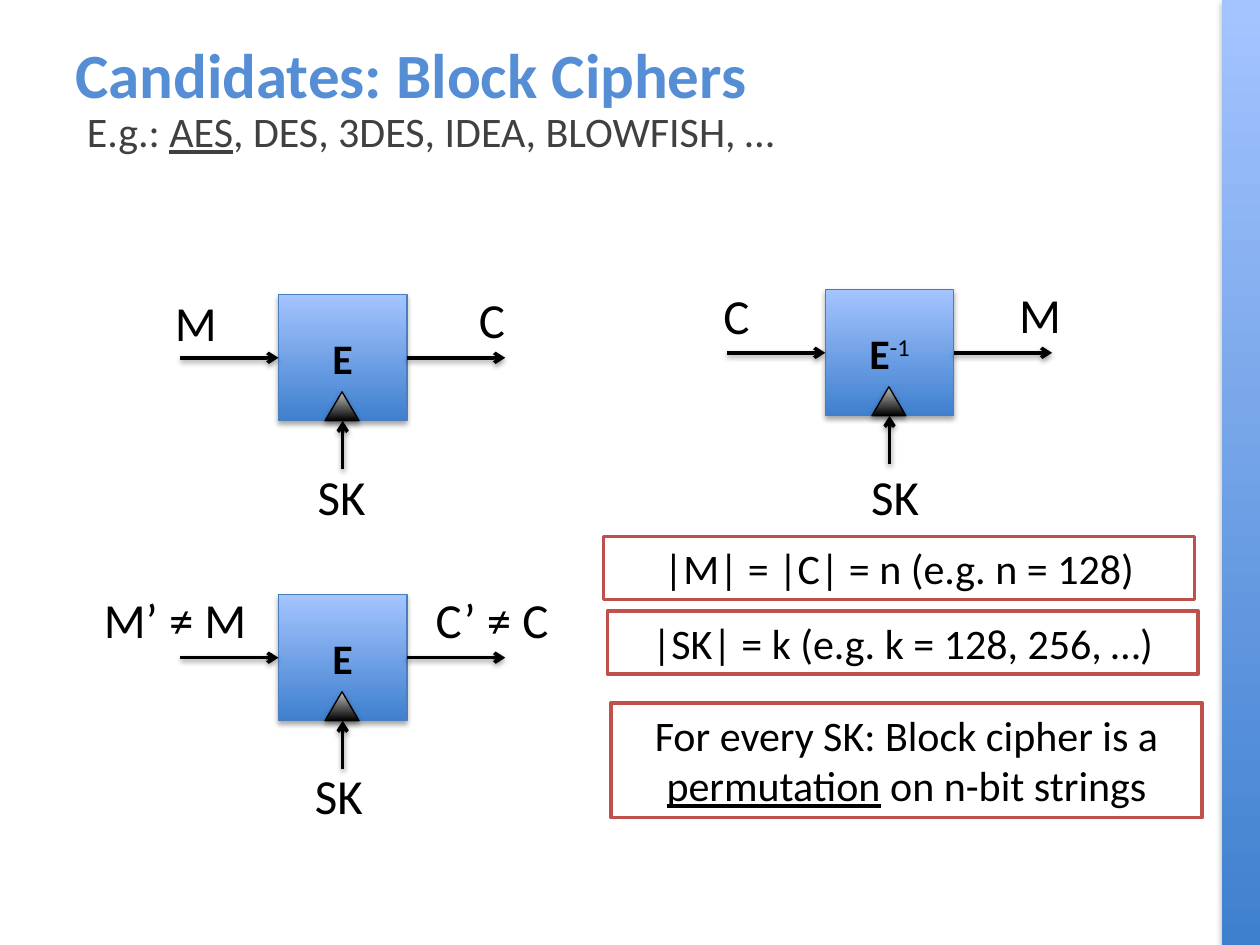
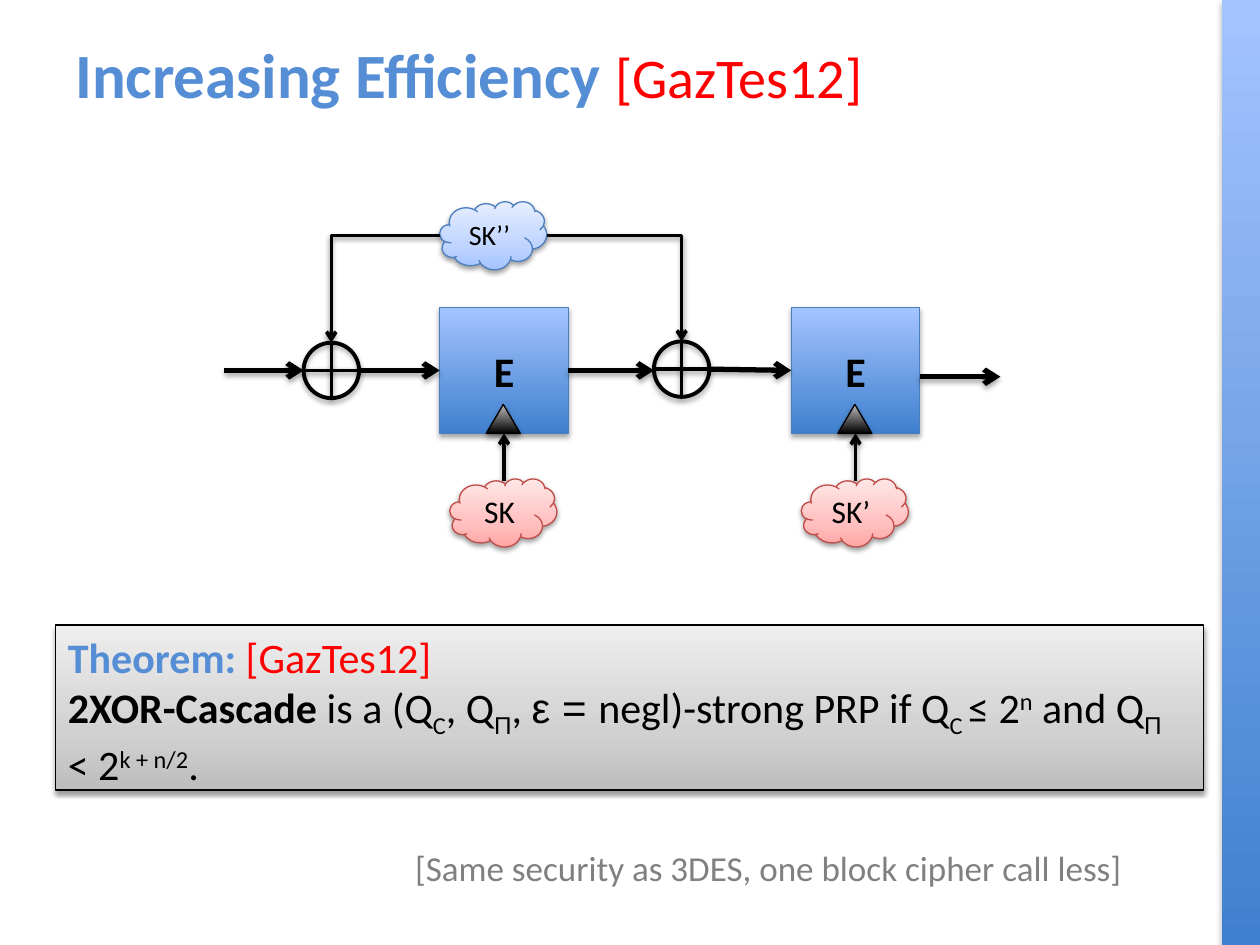
from lxml.etree import SubElement
from pptx import Presentation
from pptx.dml.color import RGBColor
from pptx.enum.shapes import MSO_CONNECTOR as CONNECTOR, MSO_SHAPE as SHAPE
from pptx.enum.text import MSO_ANCHOR as ANCHOR, PP_ALIGN as ALIGN
from pptx.oxml.ns import qn
from pptx.util import Inches, Pt

COLORS = {
    "black": "000000", "white": "FFFFFF", "title": "558ED5", "cite": "FF0000",
    "body": "404040", "note": "808080", "frame": "C0504D",
    "blue_line": "4B7EBC", "red_line": "BF4C48",
}
# Gradient stops run from bottom (0 %) to top (100 %)
GRADIENTS = {
    "blue": [(0, "3F80CE"), (100, "A4C4FF")],
    "dark": [(0, "000000"), (100, "BDBDBD")],
    "red_cloud": [(0, "FFA6A5"), (35, "FFC0BF"), (100, "FFE7E7")],
    "blue_cloud": [(0, "A4C4FF"), (35, "BFD4FF"), (100, "E6EEFF")],
    "gray": [(0, "BDBDBD"), (35, "D1D1D1"), (100, "EEEEEE")],
}
# Shadow: opacity in percent, distance in points
STRONG, SOFT = (35, 1.8), (38, 1.6)
SUBSCRIPT, SUPERSCRIPT = -25, 30


def add_item(slide, kind, box, paragraphs=(), fill=None, line=None, weight=0.75,
             shadow=None, size=24, color="black", align=ALIGN.CENTER, anchor=ANCHOR.TOP):
    """Add a shape (or a text box if kind is None); a paragraph is a list of (text, options)."""
    lengths = [Inches(value) for value in box]
    if kind is None:
        shape = slide.shapes.add_textbox(*lengths)
    else:
        shape = slide.shapes.add_shape(kind, *lengths)
        shape.shadow.inherit = False
        if fill in GRADIENTS:
            shape.fill.gradient()
            shape.fill.gradient_angle = 90
            stops = shape._element.spPr.find(qn("a:gradFill")).find(qn("a:gsLst"))
            stops[:] = []
            for position, stop_color in GRADIENTS[fill]:
                stop = SubElement(stops, qn("a:gs"), pos=str(position * 1000))
                SubElement(stop, qn("a:srgbClr"), val=stop_color)
        elif fill:
            shape.fill.solid()
            shape.fill.fore_color.rgb = RGBColor.from_string(COLORS[fill])
        else:
            shape.fill.background()
        if line:
            shape.line.color.rgb = RGBColor.from_string(COLORS[line])
            shape.line.width = Pt(weight)
        else:
            shape.line.fill.background()
        if shadow:
            effects = shape._element.spPr.find(qn("a:effectLst"))
            cast = SubElement(effects, qn("a:outerShdw"), blurRad=str(Pt(3.1)),
                              dist=str(Pt(shadow[1])), dir="5400000", rotWithShape="0")
            tone = SubElement(cast, qn("a:srgbClr"), val=COLORS["black"])
            SubElement(tone, qn("a:alpha"), val=str(shadow[0] * 1000))
    frame = shape.text_frame
    frame.word_wrap = True
    frame.vertical_anchor = anchor
    for index, runs in enumerate(paragraphs):
        paragraph = frame.add_paragraph() if index else frame.paragraphs[0]
        paragraph.alignment = align
        paragraph.font.size = Pt(size)
        paragraph.font.name = "Calibri"
        paragraph.font.color.rgb = RGBColor.from_string(COLORS[color])
        for text, options in runs:
            run = paragraph.add_run()
            run.text = text
            run.font.bold = options.get("bold")
            run.font.underline = options.get("underline")
            if "size" in options:
                run.font.size = Pt(options["size"])
            if "font" in options:
                run.font.name = options["font"]
            if "color" in options:
                run.font.color.rgb = RGBColor.from_string(COLORS[options["color"]])
            if "base" in options:
                run._r.get_or_add_rPr().set("baseline", str(options["base"] * 1000))
    return shape


def add_line(slide, start, end, weight=2, arrow=True, shadow=SOFT, bent=False,
             begin=None, finish=None):
    """Add a line; begin and finish are optional (shape, side) joints."""
    kind = CONNECTOR.ELBOW if bent else CONNECTOR.STRAIGHT
    connector = slide.shapes.add_connector(kind, *[Inches(value) for value in start + end])
    properties = connector._element.spPr
    if bent:
        properties.find(qn("a:prstGeom")).set("prst", "bentConnector2")
    if begin:
        connector.begin_connect(*begin)
    if finish:
        connector.end_connect(*finish)
    connector.line.color.rgb = RGBColor.from_string(COLORS["black"])
    connector.line.width = Pt(weight)
    if arrow:
        SubElement(properties.find(qn("a:ln")), qn("a:tailEnd"), type="arrow")
    effects = SubElement(properties, qn("a:effectLst"))
    cast = SubElement(effects, qn("a:outerShdw"), blurRad=str(Pt(3.1)),
                      dist=str(Pt(shadow[1])), dir="5400000", rotWithShape="0")
    tone = SubElement(cast, qn("a:srgbClr"), val=COLORS["black"])
    SubElement(tone, qn("a:alpha"), val=str(shadow[0] * 1000))


presentation = Presentation()
presentation.slide_width, presentation.slide_height = Inches(10), Inches(7.5)
blank = presentation.slide_layouts[6]

# Shared: side band and title
citation = ("[GazTes12]", {"color": "cite", "bold": False})
titles = [
    [("Candidates: Block Ciphers", {"bold": True})],
    [("Increasing Efficiency ", {"bold": True}), (citation[0], {**citation[1], "size": 32})],
]
slides = []
for title in titles:
    slide = presentation.slides.add_slide(blank)
    add_item(slide, SHAPE.RECTANGLE, (9.7, 0, 0.3, 7.5), fill="blue", shadow=STRONG)
    add_item(slide, None, (0.5, 0.17, 9.04, 0.83), [title], size=36, color="title",
             align=ALIGN.LEFT, anchor=ANCHOR.MIDDLE)
    slides.append(slide)
candidates, cascade = slides

# Shared: cipher boxes with key triangle and key arrow
BOX_WIDTH, BOX_HEIGHT = 1.02, 1
encrypt = [("E", {"bold": True})]
decrypt = encrypt + [("-1", {"base": SUPERSCRIPT})]
ciphers = [
    (candidates, 2.21, 2.34, encrypt),
    (candidates, 6.55, 2.3, decrypt),
    (candidates, 2.21, 4.72, encrypt),
    (cascade, 3.49, 2.44, encrypt),
    (cascade, 6.28, 2.44, encrypt),
]
cipher_boxes = []
for slide, left, top, name in ciphers:
    middle, bottom = left + BOX_WIDTH / 2, top + BOX_HEIGHT
    cipher_box = add_item(slide, SHAPE.RECTANGLE, (left, top, BOX_WIDTH, BOX_HEIGHT), [name],
                          fill="blue", line="blue_line", shadow=STRONG, anchor=ANCHOR.MIDDLE)
    add_line(slide, (middle, bottom + 0.38), (middle, bottom), finish=(cipher_box, 2))
    add_item(slide, SHAPE.ISOSCELES_TRIANGLE, (middle - 0.14, bottom - 0.23, 0.27, 0.23),
             fill="dark", line="black", shadow=STRONG)
    cipher_boxes.append(cipher_box)

# Slide 1: input and output arrows
for (slide, left, top, name), cipher_box in zip(ciphers[:3], cipher_boxes):
    center, right = top + BOX_HEIGHT / 2, left + BOX_WIDTH
    add_line(slide, (left - 0.78, center), (left, center), finish=(cipher_box, 1))
    add_line(slide, (right, center), (right + 0.78, center), begin=(cipher_box, 3))

# Slide 1: labels of messages, ciphertexts and keys
labels = [
    ("M", 1.29, 2.27, 0.42), ("C", 3.06, 2.25, 1.69), ("SK", 2.4, 3.65, 0.62),
    ("C", 5.49, 2.22, 0.71), ("M", 7.41, 2.21, 1.69), ("SK", 6.74, 3.65, 0.73),
    ("M’ ≠ M", 0.72, 4.63, 1.34), ("C’ ≠ C", 3.06, 4.63, 1.69), ("SK", 2.32, 6.03, 0.74),
]
for text, left, top, width in labels:
    add_item(candidates, None, (left, top, width, 0.57), [[(text, {})]], size=28)

# Slide 1: examples and framed facts
examples = [("E.g.: ", {}), ("AES", {"underline": True}),
            (", DES, 3DES, IDEA, BLOWFISH, …", {})]
add_item(candidates, None, (0.59, 0.79, 8.95, 0.5), [examples], color="body", align=ALIGN.LEFT)
facts = [
    (4.79, 4.26, 0.5, [("|M| = |C| = n (e.g. n = 128)", {})]),
    (4.82, 4.85, 0.5, [("|SK| = k (e.g. k = 128, 256, …)", {})]),
    (4.85, 5.58, 0.91, [("For every SK: Block cipher is a ", {}),
                        ("permutation", {"underline": True}), (" on n-bit strings", {})]),
]
for left, top, height, runs in facts:
    add_item(candidates, SHAPE.RECTANGLE, (left, top, 4.69, height), [runs],
             fill="white", line="frame", weight=2)

# Slide 2: XOR gates
GATE = 0.44
for left, top in [(2.41, 2.72), (5.19, 2.71)]:
    middle, center = left + GATE / 2, top + GATE / 2
    add_item(cascade, SHAPE.OVAL, (left, top, GATE, GATE), line="black", weight=2.25,
             shadow=STRONG)
    add_line(cascade, (middle, top), (middle, top + GATE), arrow=False)
    add_line(cascade, (left, center), (left + GATE, center), arrow=False)

# Slide 2: data path
first_box, second_box = cipher_boxes[3:]
data_path = [
    (1.78, 2.41, 2.94, None, None),
    (2.85, 3.49, 2.94, None, (first_box, 1)),
    (4.51, 5.19, 2.94, (first_box, 3), None),
    (5.64, 6.28, 2.93, None, (second_box, 1)),
    (7.3, 7.94, 2.99, None, None),
]
for start, end, height, begin, finish in data_path:
    add_line(cascade, (start, height), (end, height), weight=3, shadow=STRONG,
             begin=begin, finish=finish)

# Slide 2: key clouds and whitening key lines
clouds = [
    ("SK", 3.57, 3.8, 18, "red_cloud", "red_line"),
    ("SK’", 6.36, 3.8, 18, "red_cloud", "red_line"),
    ("SK’’", 3.49, 1.6, 16, "blue_cloud", "blue_line"),
]
for text, left, top, size, fill, line in clouds:
    add_item(cascade, SHAPE.CLOUD, (left, top, 0.85, 0.54), [[(text, {})]], fill=fill,
             line=line, shadow=SOFT, size=size, anchor=ANCHOR.MIDDLE)
add_line(cascade, (4.34, 1.87), (5.41, 2.71), bent=True)
add_line(cascade, (3.49, 1.87), (2.63, 2.72), bent=True)

# Slide 2: theorem and closing remark
sub, sup = {"base": SUBSCRIPT}, {"base": SUPERSCRIPT}
sub_pi = ("Π", {"base": SUBSCRIPT, "font": "Arial"})
theorem = [
    [("Theorem: ", {"bold": True, "color": "title"}), citation],
    [("2XOR-Cascade", {"bold": True}), (" is a (Q", {}), ("C", sub), (", Q", {}), sub_pi,
     (", ", {}), ("ε = ", {"font": "Arial"}), ("negl)-strong PRP if Q", {}), ("C ", sub),
     ("≤ 2", {}), ("n", sup), (" and Q", {}), sub_pi, (" < 2", {}), ("k + n/2", sup), (".", {})],
]
add_item(cascade, SHAPE.RECTANGLE, (0.44, 4.96, 9.11, 1.31), theorem, fill="gray",
         line="black", shadow=SOFT, align=ALIGN.LEFT)
add_item(cascade, None, (3.08, 6.67, 6.04, 0.44),
         [[("[Same security as 3DES, one block cipher call less]", {})]], size=20, color="note")

presentation.save("out.pptx")
